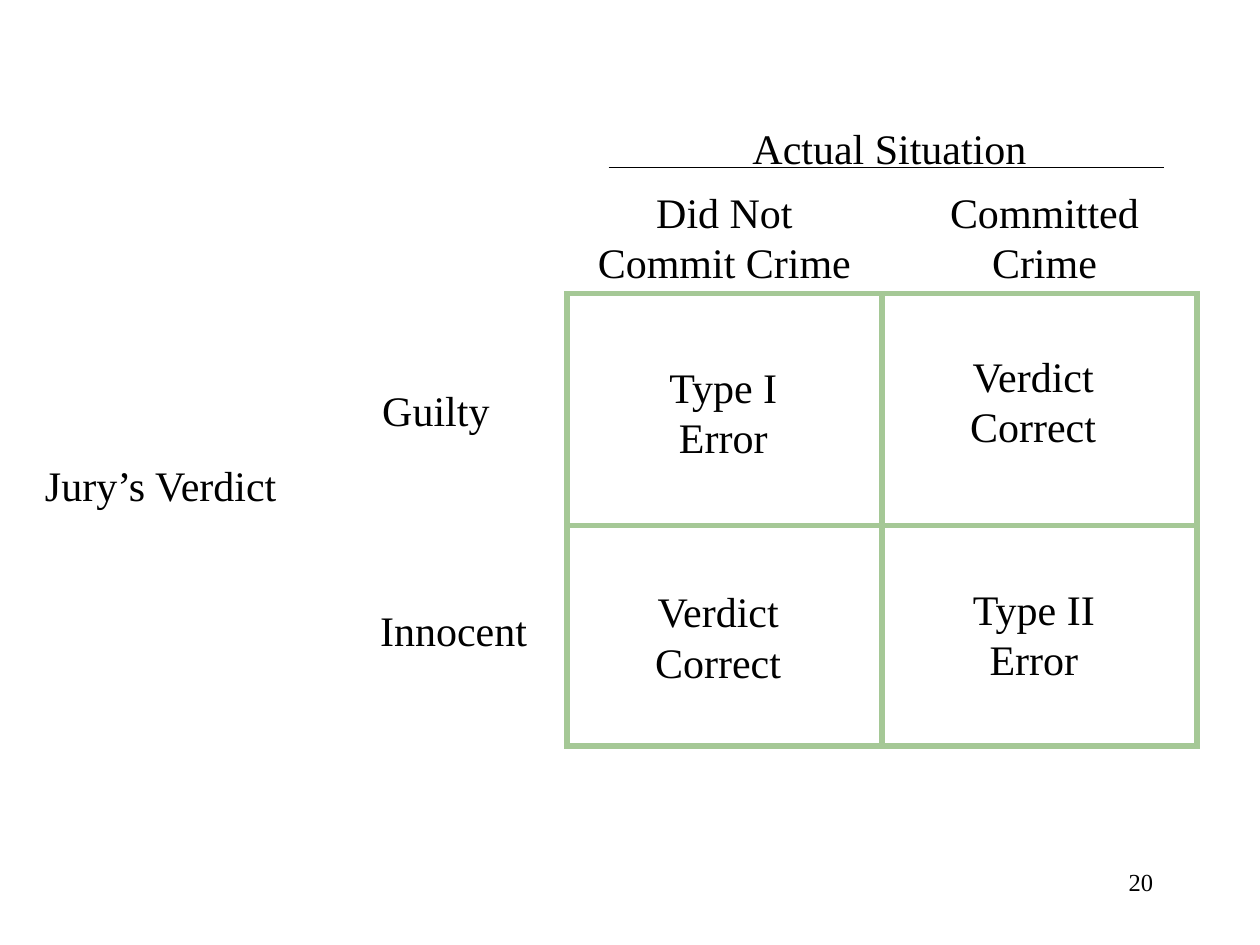
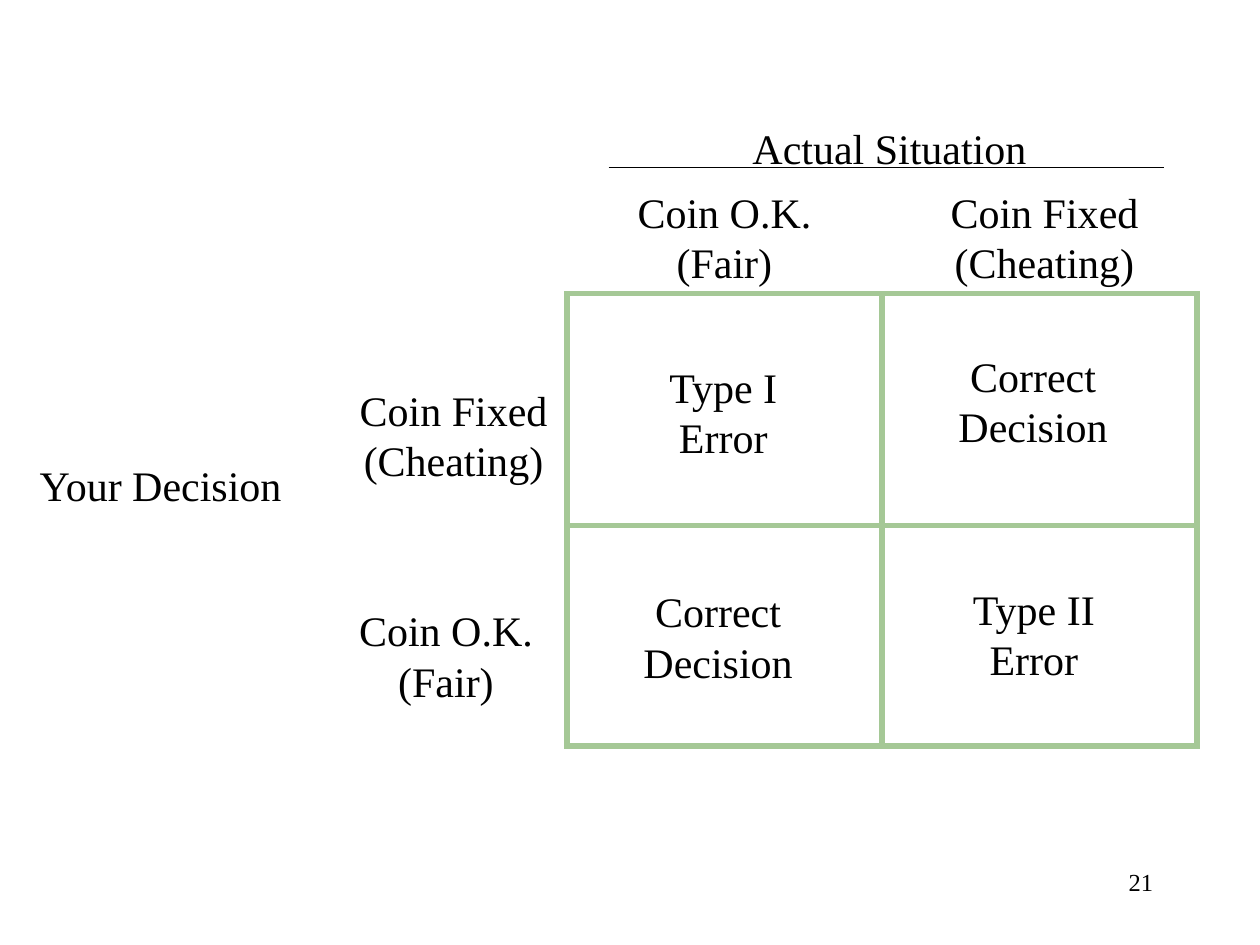
from dataclasses import dataclass

from pptx import Presentation
from pptx.dml.color import RGBColor as RGB
from pptx.enum.shapes import MSO_CONNECTOR as Conn, MSO_SHAPE as Shape
from pptx.enum.text import PP_ALIGN as Align
from pptx.oxml.ns import qn
from pptx.util import Inches, Pt
from lxml import etree


@dataclass(frozen=True)
class Theme:
    font: str = "Times New Roman"
    ink: RGB = RGB(0, 0, 0)
    grid: RGB = RGB(0xA5, 0xC8, 0x96)
    body: int = 24
    foot: int = 14
    thick: float = 3
    thin: float = 0.75


theme = Theme()


def put(slide, text, x, y, w, h=0.9, size=theme.body, align=Align.CENTER):
    """Add a text box; each line of text becomes a paragraph."""
    box = slide.shapes.add_textbox(Inches(x), Inches(y), Inches(w), Inches(h))
    frame = box.text_frame
    frame.word_wrap = True
    frame.text = text
    for para in frame.paragraphs:
        para.alignment = align
        font = para.font
        font.name, font.size, font.color.rgb = theme.font, Pt(size), theme.ink


def rule(slide, x1, y1, x2, y2, color=theme.grid, width=theme.thick):
    """Draw a straight line without a shadow."""
    line = slide.shapes.add_connector(
        Conn.STRAIGHT, Inches(x1), Inches(y1), Inches(x2), Inches(y2))
    line.line.color.rgb = color
    line.line.width = Pt(width)
    etree.SubElement(line._element.spPr, qn("a:effectLst"))


# Edges of the two-by-two grid
left, mid, right = 4.5, 7, 9.5
top, split, base = 2.33, 4.17, 5.92

# Each row is a label and the x of its centre
slides = [
    dict(number=20, side="Jury’s Verdict", right="Verdict Correct",
         cols=["Did Not\nCommit Crime", "Committed\nCrime"],
         rows=[("Guilty", 3.46), ("Innocent", 3.6)]),
    dict(number=21, side="Your Decision", right="Correct Decision",
         cols=["Coin O.K.\n(Fair)", "Coin Fixed\n(Cheating)"],
         rows=[("Coin Fixed\n(Cheating)", 3.6), ("Coin O.K.\n(Fair)", 3.54)]),
]

prs = Presentation()
prs.slide_width, prs.slide_height = Inches(10), Inches(7.5)
blank = prs.slide_layouts[6]

for data in slides:
    slide = prs.slides.add_slide(blank)
    put(slide, str(data["number"]), 7.17, 6.83, 2.08, 0.5,
        size=theme.foot, align=Align.RIGHT)

    frame = slide.shapes.add_shape(
        Shape.RECTANGLE, Inches(left), Inches(top),
        Inches(right - left), Inches(base - top))
    frame.shadow.inherit = False
    frame.fill.background()
    frame.line.color.rgb = theme.grid
    frame.line.width = Pt(theme.thick)
    # Square corners
    etree.SubElement(frame._element.spPr.find(qn("a:ln")), qn("a:miter"), lim="800000")
    rule(slide, mid, top, mid, base)
    rule(slide, left, split, right, split)

    put(slide, "Type I Error", 5.15, 2.82, 1.18)
    put(slide, "Type II Error", 7.58, 4.58, 1.25)
    for x, y in [(7.4, 2.73), (4.9, 4.6)]:
        put(slide, data["right"], x, y, 1.6)

    for (label, centre), y in zip(data["rows"], [3, 4.75]):
        put(slide, label, centre - 0.9, y, 1.8)
    put(slide, data["side"], 0.14, 3.6, 2.27, 0.5)

    put(slide, "Actual Situation", 5.76, 0.92, 2.6, 0.5)
    for label, centre in zip(data["cols"], [5.75, 8.29]):
        put(slide, label, centre - 1.2, 1.43, 2.4)
    rule(slide, 4.83, 1.33, 9.24, 1.33, color=theme.ink, width=theme.thin)

prs.save("out.pptx")
